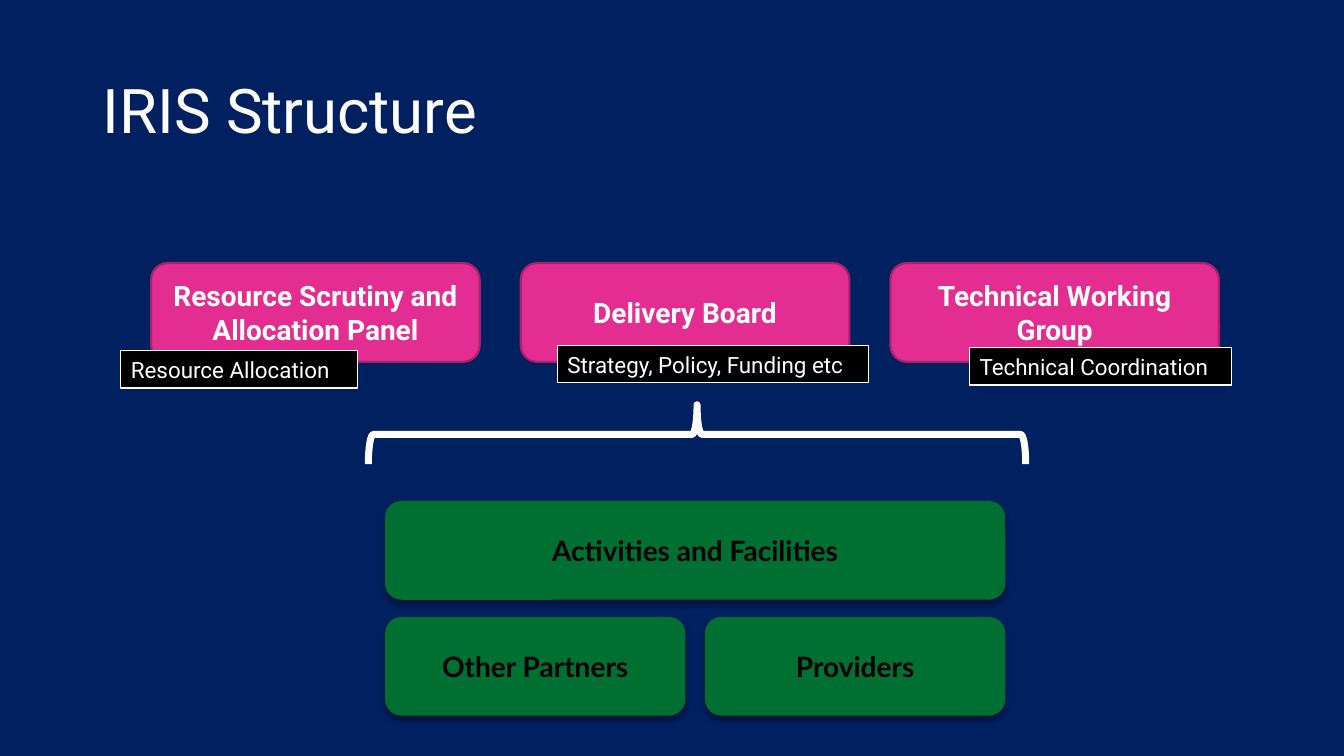
from lxml.etree import SubElement
from pptx import Presentation
from pptx.dml.color import RGBColor
from pptx.enum.shapes import MSO_SHAPE
from pptx.enum.text import MSO_ANCHOR, MSO_AUTO_SIZE, PP_ALIGN
from pptx.oxml.ns import qn
from pptx.util import Inches, Pt

NAVY = RGBColor(0x00, 0x20, 0x60)
WHITE = RGBColor(0xFF, 0xFF, 0xFF)
BLACK = RGBColor(0x00, 0x00, 0x00)
GREEN = RGBColor(0x00, 0x6F, 0x32)
PINK = RGBColor(0xE3, 0x2D, 0x91)
PLUM = RGBColor(0xA8, 0x21, 0x6B)

# The grid has 100 columns and 100 rows
WIDE, HIGH = Inches(13.33), Inches(7.5)
COL, ROW = WIDE / 100, HIGH / 100

BOX_H = 13.07
BODY_X, BODY_Y, BODY_W, BODY_STEP = 11.25, 34.8, 24.45, 27.5
PART_X, PART_Y, PART_W, PART_GAP = 28.65, 66.27, 22.35, 1.45
PART_DROP = 15.33

BODIES = ["Resource Scrutiny and Allocation Panel", "Delivery Board",
          "Technical Working Group"]
TAGS = [("Strategy, Policy, Funding etc", 41.48, 45.73, 23.18),
        ("Technical Coordination", 72.15, 46, 19.5),
        ("Resource Allocation", 9, 46.4, 17.63)]


def place(x, y, w, h):
    """Turn columns and rows into slide lengths."""
    return round(x * COL), round(y * ROW), round(w * COL), round(h * ROW)


def write(shape, text, size, face="Roboto", color=WHITE, bold=False,
          align=PP_ALIGN.LEFT, anchor=MSO_ANCHOR.MIDDLE, space=None):
    frame = shape.text_frame
    frame.word_wrap = True
    frame.vertical_anchor = anchor
    line = frame.paragraphs[0]
    line.text = text
    line.alignment = align
    line.line_spacing = space
    font = line.font
    font.name, font.size, font.bold = face, Pt(size), bold
    font.color.rgb = color


def add_box(slide, kind, area, fill=None, edge=None, width=1):
    box = slide.shapes.add_shape(kind, *place(*area))
    box.shadow.inherit = False
    if fill is None:
        box.fill.background()
    else:
        box.fill.solid()
        box.fill.fore_color.rgb = fill
    if edge is None:
        box.line.fill.background()
    else:
        box.line.color.rgb = edge
        box.line.width = Pt(width)
    return box


def cast(box):
    """Give a box a soft shadow straight below it."""
    effects = box._element.spPr.find(qn("a:effectLst"))
    shade = SubElement(effects, qn("a:outerShdw"), blurRad=str(Pt(4)),
                       dist=str(Pt(3)), dir="5400000", rotWithShape="0")
    color = SubElement(shade, qn("a:srgbClr"), val=str(BLACK))
    SubElement(color, qn("a:alpha"), val="40000")


def add_part(slide, text, x, y, w):
    box = add_box(slide, MSO_SHAPE.ROUNDED_RECTANGLE, (x, y, w, BOX_H), GREEN)
    cast(box)
    write(box, text, 20, face="Lato", color=BLACK, bold=True,
          align=PP_ALIGN.CENTER)


def add_body(slide, text, x):
    box = add_box(slide, MSO_SHAPE.ROUNDED_RECTANGLE,
                  (x, BODY_Y, BODY_W, BOX_H), PINK, PLUM, 1.5)
    write(box, text, 20, bold=True, align=PP_ALIGN.CENTER)


def add_tag(slide, text, x, y, w):
    box = add_box(slide, MSO_SHAPE.RECTANGLE, (x, y, w, 4.93),
                  BLACK, WHITE, 0.75)
    write(box, text, 16, anchor=MSO_ANCHOR.TOP)
    box.text_frame.auto_size = MSO_AUTO_SIZE.SHAPE_TO_FIT_TEXT


def add_brace(slide):
    brace = add_box(slide, MSO_SHAPE.LEFT_BRACE, (49.65, 14, 4.42, 86.93),
                    edge=WHITE, width=5)
    brace.rotation = 90


def add_title(slide, text):
    title = slide.shapes.title
    title.left, title.top, title.width, title.height = place(
        6.9, 5.33, 70.5, 19.33)
    write(title, text, 44, space=0.9)


def main():
    deck = Presentation()
    deck.slide_width, deck.slide_height = WIDE, HIGH
    slide = deck.slides.add_slide(deck.slide_layouts[5])
    slide.background.fill.solid()
    slide.background.fill.fore_color.rgb = NAVY

    add_title(slide, "IRIS Structure")
    for i, text in enumerate(["Other Partners", "Providers"]):
        add_part(slide, text, PART_X + i * (PART_W + PART_GAP),
                 PART_Y + PART_DROP, PART_W)
    add_part(slide, "Activities and Facilities", PART_X, PART_Y,
             2 * PART_W + PART_GAP)
    for i, text in enumerate(BODIES):
        add_body(slide, text, BODY_X + i * BODY_STEP)
    add_brace(slide)
    for tag in TAGS:
        add_tag(slide, *tag)
    deck.save("out.pptx")


if __name__ == "__main__":
    main()
